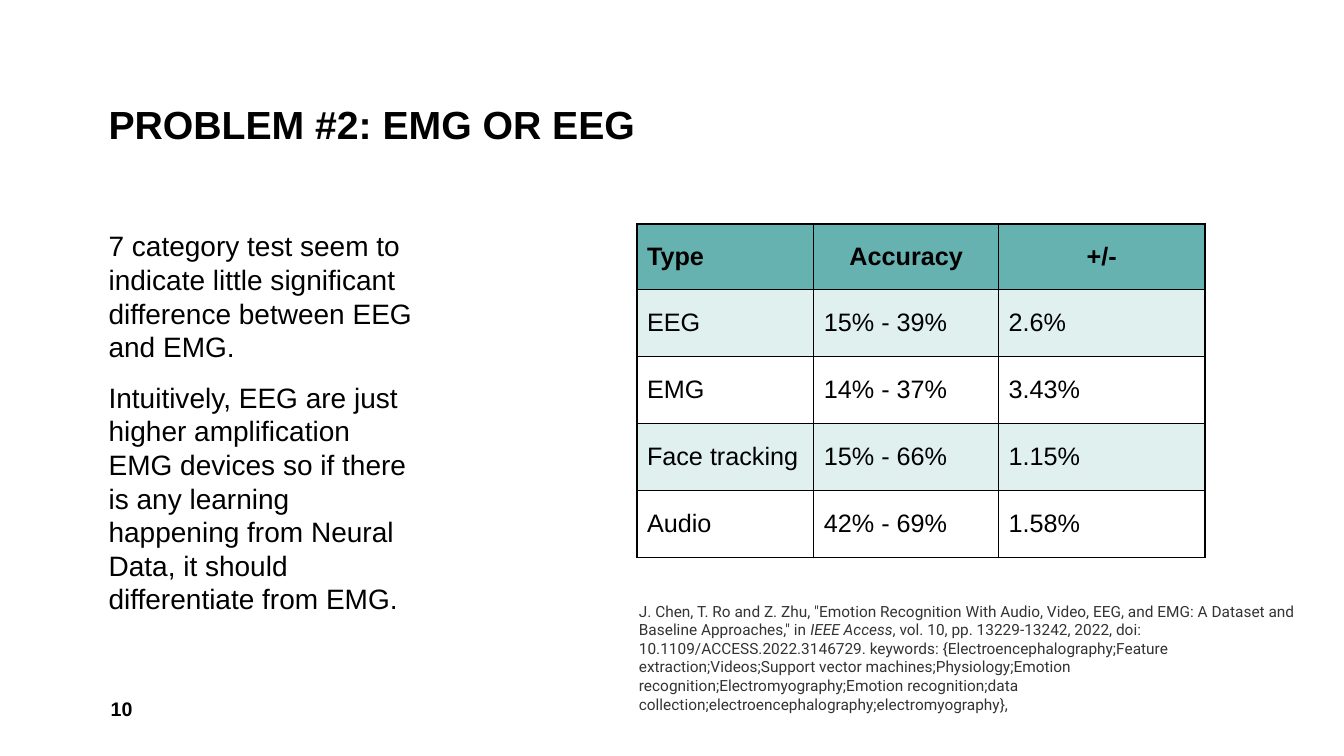
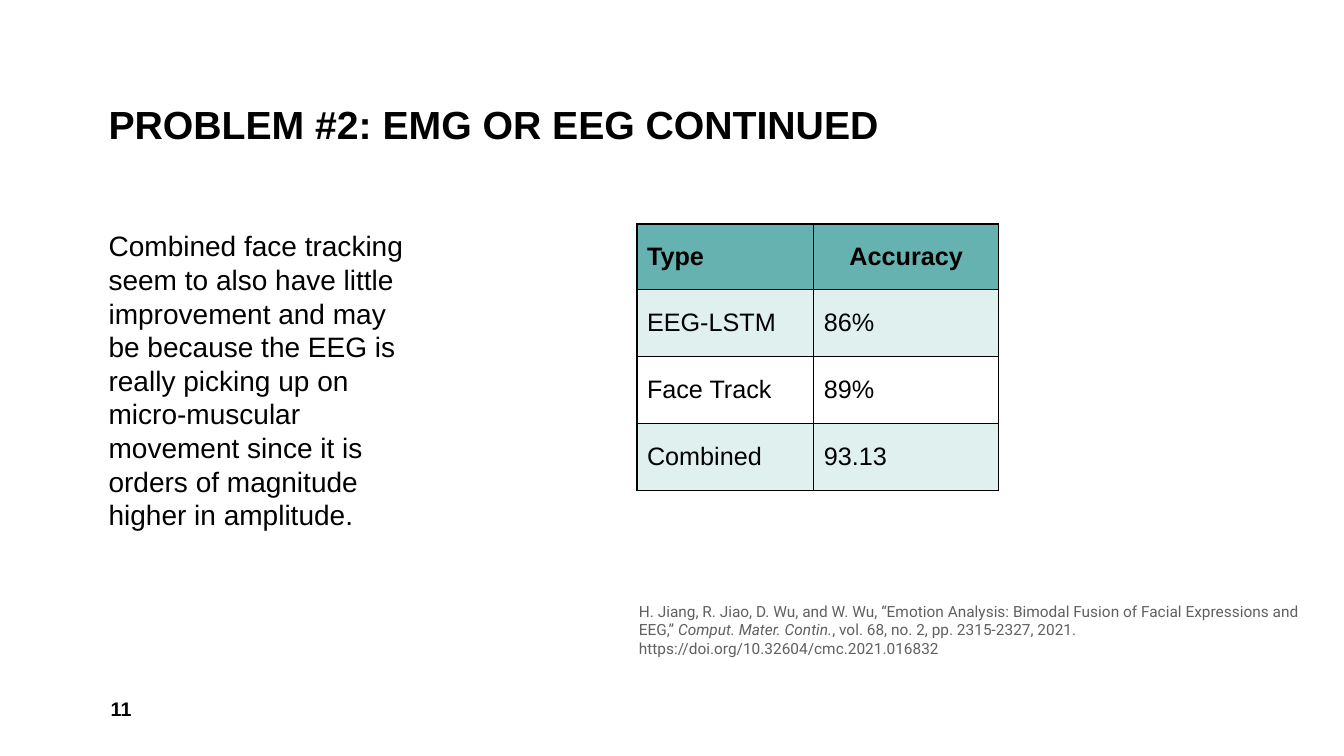
from pptx import Presentation
from pptx.dml.color import RGBColor
from pptx.enum.text import MSO_ANCHOR as ANCHOR, PP_ALIGN as ALIGN
from pptx.oxml import parse_xml
from pptx.oxml.ns import nsdecls
from pptx.util import Pt

BLACK, TEAL, PALE_TEAL = "000000", "66B2B0", "E0F0EF"

# Boxes are left, top, width, height in points.
TITLE = {"box": (70.5, 11, 740, 98.5), "anchor": ANCHOR.BOTTOM, "spacing": 0.9,
         "font": {"name": "Arial", "size": 28, "bold": True, "color": BLACK}}
BODY = {"box": (70.5, 160, 237.5, 307.5), "anchor": ANCHOR.TOP, "spacing": Pt(24),
        "font": {"name": "Arial", "size": 20, "color": BLACK}}
NUMBER = {"box": (72, 492, 94, 29), "anchor": ANCHOR.MIDDLE, "spacing": 1.0,
          "font": {"name": "Arial", "size": 14, "bold": True, "color": BLACK}}
CITATION = {"box": (449.3, 426.2, 489.6, 113.5), "anchor": ANCHOR.TOP, "spacing": Pt(13.3),
            "font": {"name": "Roboto", "size": 11}}

TABLE_LEFT, TABLE_TOP = 455, 160
COLUMN_WIDTHS = (126.3, 132, 147.5)
HEADER_HEIGHT, ROW_HEIGHT = 46.8, 47.8
CELL_FONT = {"name": "Arial", "size": 18, "color": BLACK}

SLIDES = [
    {
        "number": "10",
        "title": "PROBLEM #2: EMG OR EEG",
        "body": [
            "7 category test seem to indicate little significant difference "
            "between EEG and EMG.",
            "Intuitively, EEG are just higher amplification EMG devices so if there "
            "is any learning happening from Neural Data, it should differentiate "
            "from EMG.",
        ],
        "table": [
            ("Type", "Accuracy", "+/-"),
            ("EEG", "15% - 39%", "2.6%"),
            ("EMG", "14% - 37%", "3.43%"),
            ("Face tracking", "15% - 66%", "1.15%"),
            ("Audio", "42% - 69%", "1.58%"),
        ],
        "citation_color": "333333",
        "citation": (
            'J. Chen, T. Ro and Z. Zhu, "Emotion Recognition With Audio, Video, EEG, '
            'and EMG: A Dataset and Baseline Approaches," in ',
            "IEEE Access",
            ", vol. 10, pp. 13229-13242, 2022, doi: 10.1109/ACCESS.2022.3146729. "
            "keywords: {Electroencephalography;Feature extraction;Videos;Support "
            "vector machines;Physiology;Emotion recognition;Electromyography;Emotion "
            "recognition;data collection;electroencephalography;electromyography},",
        ),
    },
    {
        "number": "11",
        "title": "PROBLEM #2: EMG OR EEG CONTINUED",
        "body": [
            "Combined face tracking seem to also have little improvement and may be "
            "because the EEG is really picking up on micro-muscular movement since it "
            "is orders of magnitude higher in amplitude.",
        ],
        "table": [
            ("Type", "Accuracy"),
            ("EEG-LSTM", "86%"),
            ("Face Track", "89%"),
            ("Combined", "93.13"),
        ],
        "citation_color": "606060",
        "citation": (
            "H. Jiang, R. Jiao, D. Wu, and W. Wu, “Emotion Analysis: Bimodal Fusion "
            "of Facial Expressions and EEG,” ",
            "Comput. Mater. Contin.",
            ", vol. 68, no. 2, pp. 2315-2327, 2021. "
            "https://doi.org/10.32604/cmc.2021.016832",
        ),
    },
]


def rgb(color):
    return RGBColor.from_string(color)


def add_run(p, text, **style):
    r = p.add_run()
    r.text = text
    for key, value in style.items():
        if key == "color":
            r.font.color.rgb = rgb(value)
        else:
            setattr(r.font, key, Pt(value) if key == "size" else value)


def add_text(s, style, paragraphs, **extra):
    """Add a text box; each paragraph is a list of (text, run format) pairs."""
    tf = s.shapes.add_textbox(*map(Pt, style["box"])).text_frame
    tf.word_wrap = True
    tf.vertical_anchor = style["anchor"]
    for i, runs in enumerate(paragraphs):
        p = tf.add_paragraph() if i else tf.paragraphs[0]
        p.line_spacing = style["spacing"]
        if i:
            p.space_before = Pt(12)
        for text, run_format in runs:
            add_run(p, text, **style["font"], **extra, **run_format)


def add_borders(cell):
    tc_pr = cell._tc.get_or_add_tcPr()
    for i, side in enumerate("LRTB"):
        tc_pr.insert(i, parse_xml(
            f'<a:ln{side} {nsdecls("a")} w="{Pt(1)}"><a:solidFill>'
            f'<a:srgbClr val="{BLACK}"/></a:solidFill></a:ln{side}>'))


def add_data_table(s, rows):
    widths = COLUMN_WIDTHS[:len(rows[0])]
    heights = [HEADER_HEIGHT] + [ROW_HEIGHT] * (len(rows) - 1)
    table = s.shapes.add_table(len(rows), len(widths), Pt(TABLE_LEFT), Pt(TABLE_TOP),
                               Pt(sum(widths)), Pt(sum(heights))).table
    table.first_row = table.horz_banding = False
    for column, width in zip(table.columns, widths):
        column.width = Pt(width)
    for i, (values, height) in enumerate(zip(rows, heights)):
        table.rows[i].height = Pt(height)
        for j, value in enumerate(values):
            cell = table.cell(i, j)
            cell.vertical_anchor = ANCHOR.MIDDLE
            if i == 0 or i % 2:
                cell.fill.solid()
                cell.fill.fore_color.rgb = rgb(PALE_TEAL if i else TEAL)
            else:
                cell.fill.background()
            add_borders(cell)
            p = cell.text_frame.paragraphs[0]
            p.alignment = ALIGN.CENTER if i == 0 and j else ALIGN.LEFT
            add_run(p, value, **CELL_FONT, bold=i == 0)


def main():
    prs = Presentation()
    prs.slide_width, prs.slide_height = Pt(960), Pt(540)
    for content in SLIDES:
        s = prs.slides.add_slide(prs.slide_layouts[6])
        add_text(s, TITLE, [[(content["title"], {})]])
        add_text(s, BODY, [[(text, {})] for text in content["body"]])
        add_data_table(s, content["table"])
        add_text(s, NUMBER, [[(content["number"], {})]])
        before, journal, after = content["citation"]
        add_text(s, CITATION, [[(before, {}), (journal, {"italic": True}), (after, {})]],
                 color=content["citation_color"])
    prs.save("out.pptx")


if __name__ == "__main__":
    main()
